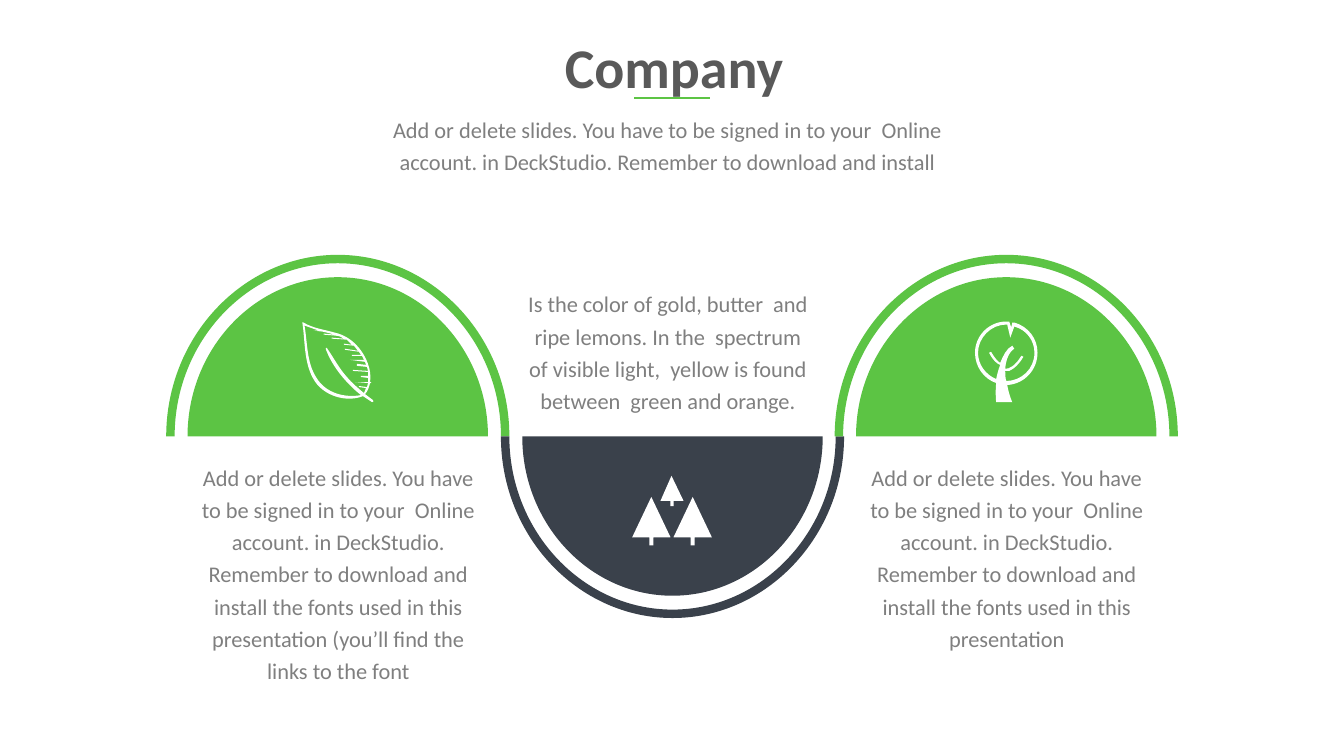
from lxml import etree
from pptx import Presentation
from pptx import util as u
from pptx.dml import color
from pptx.enum import shapes, text
from pptx.oxml import ns

COLOURS = {"green": "5CC444", "slate": "3A414B", "white": "FFFFFF",
           "title": "595959", "body": "7F7F7F"}
PX = 9144
BASELINE = 433
INTRO = ("Add or delete slides. You have to be signed in to your  Online "
         "account. in DeckStudio. Remember to download and install")
FONTS = INTRO + " the fonts used in this presentation"
LIGHT = ("Is the color of gold, butter  and ripe lemons. In the  spectrum of "
         "visible light,  yellow is found between  green and orange.")

LEAF_BLADE = """
M 302 323 C 305 340 304 360 314 375 323 390 342 395 358 392
343 380 329 363 323 346 L 324 345 C 331 355 336 365 344 374 349 380 355 385 361 390
L 363 385 356 384 356 383 364 384 365 380 352 379 365 379 365 375 358 374
358 373 365 373 365 369 350 368 350 367 365 368 364 364 354 363 354 361 363 362
362 359 347 357 361 357 359 353 349 353 349 352 358 352 356 349 342 347 342 346
355 348 351 343 341 342 341 341 349 342 344 337 329 336 329 335 341 336
C 338 334 336 333 333 333 L 321 332 321 331 332 332 C 328 331 324 330 320 329
L 311 328 316 328 Z"""

LEAF_RIM = """
M 301 320 C 311 326 322 327 332 330 341 332 349 337 355 344
363 353 369 367 367 379 L 368 379 368 380 367 380 C 366 384 365 388 362 391
365 393 367 395 370 397 371 398 370 399 369 399 366 397 363 395 360 393
345 399 326 394 315 382 301 365 303 341 300 321 299 320 300 319 301 320 Z"""

PINES = """
M 687 493 L 706 533 689 533 689 541 685 541 685 533 668 533 Z
M 646 493 L 665 533 648 533 648 541 644 541 644 533 627 533 Z
M 666 472 L 678 497 668 497 668 502 665 502 665 497 655 497 Z"""

TREE_CROWN = """
M 998 322 C 983 322 970 335 970 350 970 362 978 372 988 376
989 372 990 367 992 362 989 361 985 358 981 350 L 983 349
C 987 356 990 359 992 360 995 353 998 346 1004 343 L 1006 346
C 1006 346 998 350 997 366 1001 366 1007 363 1013 353 L 1015 354
C 1011 361 1006 366 1001 368 1000 368 998 368 997 368 997 371 997 375 998 378
1013 378 1026 366 1026 350 1026 338 1018 327 1006 324 L 1002 335 999 322 Z"""

TREE_RIM = """
M 998 319 L 1001 319 1003 325 1004 320 1006 320
C 1020 324 1029 336 1029 350 1029 367 1016 381 999 382 1000 387 1001 392 1004 399
L 988 399 C 988 399 987 390 988 380 976 376 967 364 967 350
967 333 981 319 998 319 Z"""


class SlideArtist:
    """Draws styled elements on one slide, with lengths in px."""

    def __init__(self, page, font="Calibri"):
        self.page = page
        self.font = font

    def colour(self, name):
        return color.RGBColor.from_string(COLOURS[name])

    def label(self, frame, words, size=16, tint="body", bold=False):
        box = self.page.shapes.add_textbox(*(value * PX for value in frame))
        box.text_frame.word_wrap = True
        para = box.text_frame.paragraphs[0]
        para.alignment = text.PP_ALIGN.CENTER
        para.line_spacing = 1.2
        span = para.add_run()
        span.text = words
        span.font.name = self.font
        span.font.size = u.Pt(size)
        span.font.bold = bold
        span.font.color.rgb = self.colour(tint)

    def rule(self, left, right, y, tint, weight):
        line = self.page.shapes.add_connector(
            shapes.MSO_CONNECTOR.STRAIGHT, left * PX, y * PX, right * PX, y * PX)
        line.line.color.rgb = self.colour(tint)
        line.line.width = u.Pt(weight)
        etree.SubElement(line.element.spPr, ns.qn("a:effectLst"))

    def outline(self, drawing, tint, weight=None):
        builder, kinds = None, []
        for contour in drawing.split("M")[1:]:
            numbers, kind = [], "M"
            for word in contour.replace("Z", "").split():
                if word in ("L", "C"):
                    kind = word
                    continue
                numbers.append(int(word))
                if kind != "M" and len(numbers) % 2 == 0:
                    kinds.append(kind)
            points = list(zip(numbers[::2], numbers[1::2]))
            if builder is None:
                builder = self.page.shapes.build_freeform(*points[0], scale=PX)
            else:
                builder.move_to(*points[0])
            builder.add_line_segments(points[1:], close="Z" in contour)
        shape = builder.convert_to_shape()
        self.bend(shape, kinds)
        shape.shadow.inherit = False
        if weight:
            shape.fill.background()
            shape.line.color.rgb = self.colour(tint)
            shape.line.width = u.Pt(weight)
        else:
            shape.fill.solid()
            shape.fill.fore_color.rgb = self.colour(tint)
            shape.line.fill.background()

    def bend(self, shape, kinds):
        steps = list(shape.element.iter(ns.qn("a:lnTo")))
        curved = [step for step, kind in zip(steps, kinds) if kind == "C"]
        for first, second, third in zip(curved[::3], curved[1::3], curved[2::3]):
            curve = etree.Element(ns.qn("a:cubicBezTo"))
            first.addprevious(curve)
            for step in (first, second, third):
                curve.append(step[0])
                step.getparent().remove(step)

    def half_ellipse(self, centre, width, height, tint, weight=None):
        near, rise = round(width * 0.55), round(height * 0.55)
        left, right, far = centre - width, centre + width, BASELINE + height
        drawing = (f"M {left} {BASELINE} C {left} {BASELINE + rise} "
                   f"{centre - near} {far} {centre} {far} {centre + near} {far} "
                   f"{right} {BASELINE + rise} {right} {BASELINE}")
        self.outline(drawing if weight else drawing + " Z", tint, weight)


def main():
    deck = Presentation()
    deck.slide_width, deck.slide_height = 1333 * PX, 750 * PX
    artist = SlideArtist(deck.slides.add_slide(deck.slide_layouts[6]))

    artist.label((355, 105, 614, 73), INTRO)
    artist.rule(629, 704, 97, "green", 1.5)
    for centre, direction, tint in ((335, -1, "green"), (667, 1, "slate"),
                                    (998, -1, "green")):
        artist.half_ellipse(centre, 149, 158 * direction, tint)
        artist.half_ellipse(centre, 166, 176 * direction, tint, 6)
    artist.label((186, 450, 299, 236), FONTS + " (you’ll find the links to the font")
    artist.label((849, 450, 299, 204), FONTS)
    artist.label((513, 278, 299, 139), LIGHT)
    for icon in (LEAF_BLADE + LEAF_RIM, PINES, TREE_CROWN + TREE_RIM):
        artist.outline(icon, "white")
    artist.label((335, 14, 667, 91), "Company", 40, "title", True)
    deck.save("out.pptx")


if __name__ == "__main__":
    main()
